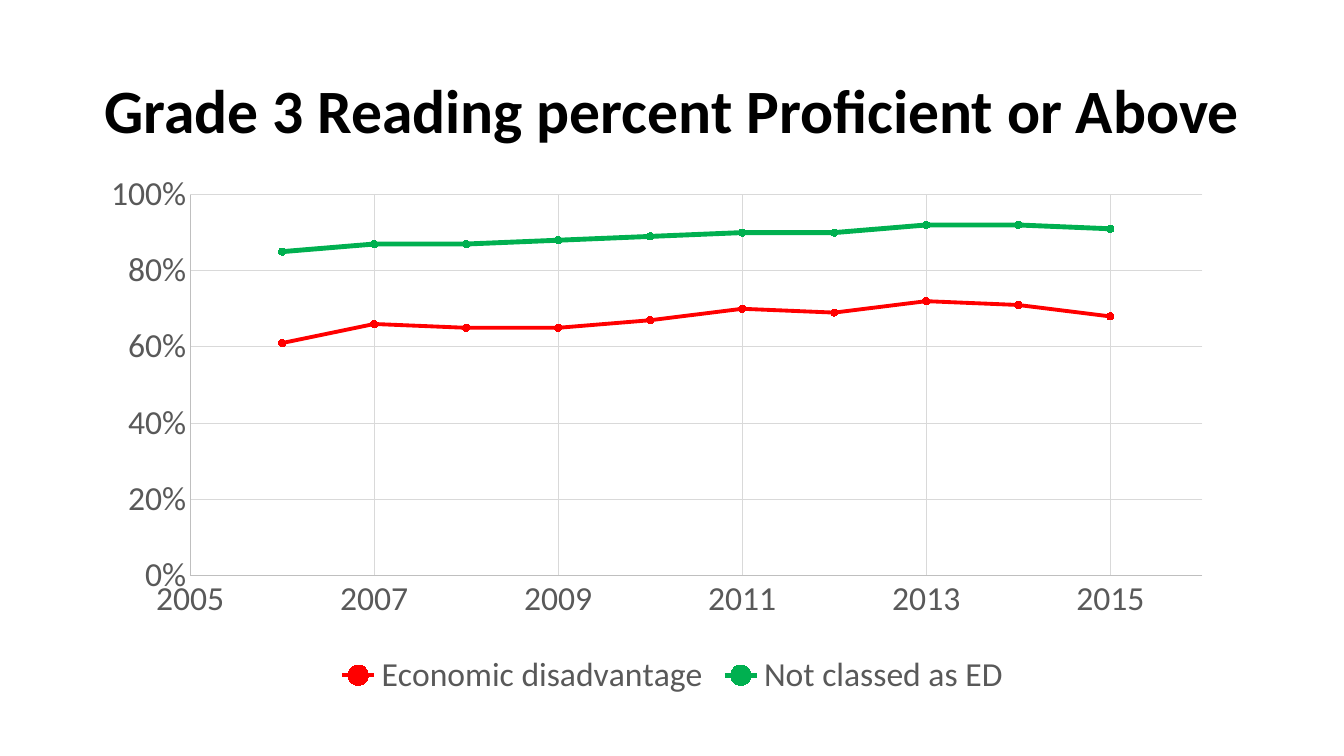
"""Build a slide with a scatter chart of grade 3 reading proficiency by year."""
from lxml import etree
from pptx import Presentation
from pptx.chart.data import XyChartData
from pptx.dml.color import RGBColor
from pptx.enum.chart import XL_CHART_TYPE, XL_LEGEND_POSITION, XL_MARKER_STYLE, XL_TICK_MARK
from pptx.enum.text import MSO_ANCHOR, PP_ALIGN
from pptx.oxml.ns import qn
from pptx.util import Inches, Pt

SCATTER = XL_CHART_TYPE.XY_SCATTER_LINES
BOTTOM = XL_LEGEND_POSITION.BOTTOM
CIRCLE = XL_MARKER_STYLE.CIRCLE
NO_TICK = XL_TICK_MARK.NONE
MIDDLE = MSO_ANCHOR.MIDDLE
CENTER = PP_ALIGN.CENTER

FONT = "Calibri"
YEARS = range(2006, 2016)
GROUPS = [
    ("Economic disadvantage", "FF0000", 2.75,
     [0.61, 0.66, 0.65, 0.65, 0.67, 0.70, 0.69, 0.72, 0.71, 0.68]),
    ("Not classed as ED", "00B050", 3.5,
     [0.85, 0.87, 0.87, 0.88, 0.89, 0.90, 0.90, 0.92, 0.92, 0.91]),
]


def color(value):
    return RGBColor.from_string(value)


def style_font(font, size, shade):
    font.name = FONT
    font.size = Pt(size)
    font.color.rgb = color(shade)


deck = Presentation()
deck.slide_width, deck.slide_height = Inches(13.33), Inches(7.5)
page = deck.slides.add_slide(deck.slide_layouts[5])
left, width = Inches(0.92), Inches(11.5)

title = page.shapes.title
title.left, title.top, title.width, title.height = left, Inches(0.4), width, Inches(1.45)
title.text_frame.vertical_anchor = MIDDLE
title.text_frame.word_wrap = True
para = title.text_frame.paragraphs[0]
para.alignment = CENTER
para.line_spacing = 0.9
span = para.add_run()
span.text = "Grade 3 Reading percent Proficient or Above"
span.font.bold = True
style_font(span.font, 44, "000000")

data = XyChartData()
for name, shade, weight, shares in GROUPS:
    points = data.add_series(name)
    for year, share in zip(YEARS, shares):
        points.add_data_point(year, share)

chart = page.shapes.add_chart(SCATTER, left, Inches(1.58), width, Inches(5.39), data).chart
chart.has_title = False
style_font(chart.font, 24, "595959")
chart.has_legend = True
chart.legend.position = BOTTOM
chart.legend.include_in_layout = False
style_font(chart.legend.font, 24, "595959")

for axis, low, high, step, pattern in [
    (chart.category_axis, 2005, 2016, 2, "General"),
    (chart.value_axis, 0, 1, 0.2, "0%"),
]:
    axis.minimum_scale, axis.maximum_scale, axis.major_unit = low, high, step
    axis.major_tick_mark = axis.minor_tick_mark = NO_TICK
    axis.has_major_gridlines = True
    axis.tick_labels.number_format = pattern
    axis.tick_labels.number_format_is_linked = False
    style_font(axis.tick_labels.font, 24, "595959")
    for line, shade in [(axis.format.line, "BFBFBF"),
                        (axis.major_gridlines.format.line, "D9D9D9")]:
        line.color.rgb = color(shade)
        line.width = Pt(0.75)

plot = chart.plots[0]
plot.vary_by_categories = False
for series, (name, shade, weight, shares) in zip(plot.series, GROUPS):
    series.smooth = False
    series.format.line.color.rgb = color(shade)
    series.format.line.width = Pt(weight)
    series.marker.style = CIRCLE
    series.marker.size = 5
    series.marker.format.fill.solid()
    series.marker.format.fill.fore_color.rgb = color(shade)
    series.marker.format.line.color.rgb = color(shade)

plot_area = chart.element.find(".//" + qn("c:plotArea"))
layout = plot_area.find(qn("c:layout"))
if layout is None:
    layout = etree.Element(qn("c:layout"))
    plot_area.insert(0, layout)
manual = etree.SubElement(layout, qn("c:manualLayout"))
for tag, value in [("layoutTarget", "inner"), ("xMode", "edge"), ("yMode", "edge"),
                   ("x", "0.084"), ("y", "0.065"), ("w", "0.873"), ("h", "0.701")]:
    etree.SubElement(manual, qn("c:" + tag)).set("val", value)

deck.save("out.pptx")
